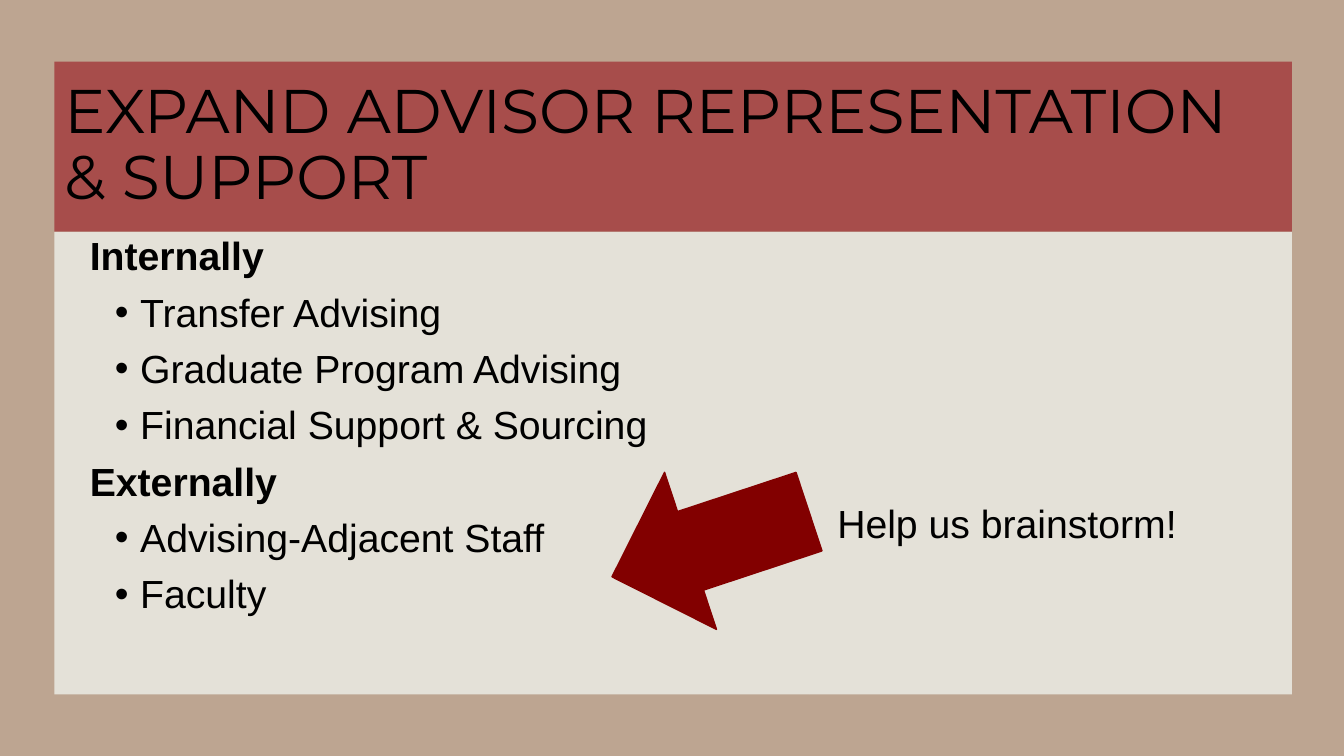
from dataclasses import dataclass

from lxml.etree import SubElement
from pptx import Presentation
from pptx.dml.color import RGBColor
from pptx.enum.shapes import MSO_SHAPE
from pptx.enum.text import MSO_ANCHOR, MSO_AUTO_SIZE, PP_ALIGN
from pptx.oxml.ns import qn
from pptx.util import Cm, Pt


@dataclass(frozen=True)
class Theme:
    backdrop: str = "BDA591"
    banner: str = "A74D4B"
    panel: str = "E4E1D8"
    arrow: str = "820000"
    ink: str = "000000"
    heading_font: str = "Montserrat"
    body_font: str = "Arial"
    heading_size: int = 44
    body_size: int = 28
    line_spacing: float = 0.9
    space_before: int = 10


def write(paragraph, text, *, font, size, color, bold=False, spacing=0.9,
          before=0, margin=0, hanging=0, bullet=None):
    paragraph.alignment = PP_ALIGN.LEFT
    paragraph.line_spacing = spacing
    paragraph.space_before = Pt(before)
    properties = paragraph._p.get_or_add_pPr()
    properties.set("marL", str(Cm(margin)))
    properties.set("indent", str(-Cm(hanging)))
    if bullet:
        SubElement(properties, qn("a:buFont"), typeface=font)
        SubElement(properties, qn("a:buChar"), char=bullet)
    else:
        SubElement(properties, qn("a:buNone"))
    run = paragraph.add_run()
    run.text = text
    run.font.name = font
    run.font.size = Pt(size)
    run.font.bold = bold
    run.font.color.rgb = RGBColor.from_string(color)


class SlideBuilder:
    def __init__(self, slide, theme):
        self.slide = slide
        self.theme = theme

    def paint(self, fill, color):
        fill.solid()
        fill.fore_color.rgb = RGBColor.from_string(color)

    def background(self):
        self.paint(self.slide.background.fill, self.theme.backdrop)

    def place(self, holder, box, color, anchor):
        holder.left, holder.top, holder.width, holder.height = map(Cm, box)
        self.paint(holder.fill, color)
        frame = holder.text_frame
        frame.word_wrap = True
        frame.auto_size = MSO_AUTO_SIZE.NONE
        frame.vertical_anchor = anchor
        return frame

    def title(self, text, box):
        theme = self.theme
        frame = self.place(self.slide.shapes.title, box, theme.banner, MSO_ANCHOR.MIDDLE)
        write(frame.paragraphs[0], text, font=theme.heading_font,
              size=theme.heading_size, color=theme.ink, spacing=theme.line_spacing)

    def body(self, index, entries, box, anchor=MSO_ANCHOR.TOP):
        theme = self.theme
        frame = self.place(self.slide.placeholders[index], box, theme.panel, anchor)
        for number, (text, style) in enumerate(entries):
            paragraph = frame.add_paragraph() if number else frame.paragraphs[0]
            write(paragraph, text, font=theme.body_font, size=theme.body_size,
                  color=theme.ink, spacing=theme.line_spacing,
                  before=theme.space_before, **style)
        return frame

    def arrow(self, box, rotation):
        pointer = self.slide.shapes.add_shape(MSO_SHAPE.DOWN_ARROW, *map(Cm, box))
        pointer.rotation = rotation
        pointer.shadow.inherit = False
        self.paint(pointer.fill, self.theme.arrow)
        self.paint(pointer.line.fill, self.theme.arrow)
        pointer.line.width = Pt(1)


def main():
    deck = Presentation()
    deck.slide_width, deck.slide_height = Cm(33.87), Cm(19.05)
    builder = SlideBuilder(deck.slides.add_slide(deck.slide_layouts[3]), Theme())

    left, top, width = 1.37, 1.55, 31.19
    banner_height, panel_height, audience_width = 4.29, 11.66, 19.02
    panel_top = top + banner_height

    builder.background()
    builder.title("EXPAND ADVISOR REPRESENTATION & SUPPORT",
                  (left, top, width, banner_height))

    audiences = {
        "Internally": ["Transfer Advising", "Graduate Program Advising",
                       "Financial Support & Sourcing"],
        "Externally": ["Advising-Adjacent Staff", "Faculty"],
    }
    group_style = {"bold": True, "margin": 0.64}
    member_style = {"margin": 1.91, "hanging": 0.64, "bullet": "•"}
    entries = []
    for group, members in audiences.items():
        entries.append((group, group_style))
        entries += [(member, member_style) for member in members]
    builder.body(1, entries, (left, panel_top, audience_width, panel_height))

    invitation = builder.body(
        2, [("Help us brainstorm!", {})],
        (left + audience_width, panel_top, width - audience_width, panel_height),
        MSO_ANCHOR.MIDDLE)
    invitation.margin_left = Cm(0.71)
    invitation.margin_top = Cm(3.3)

    builder.arrow((15.82, 11.1, 4.17, 5.23), 71.7)
    deck.save("out.pptx")


if __name__ == "__main__":
    main()
